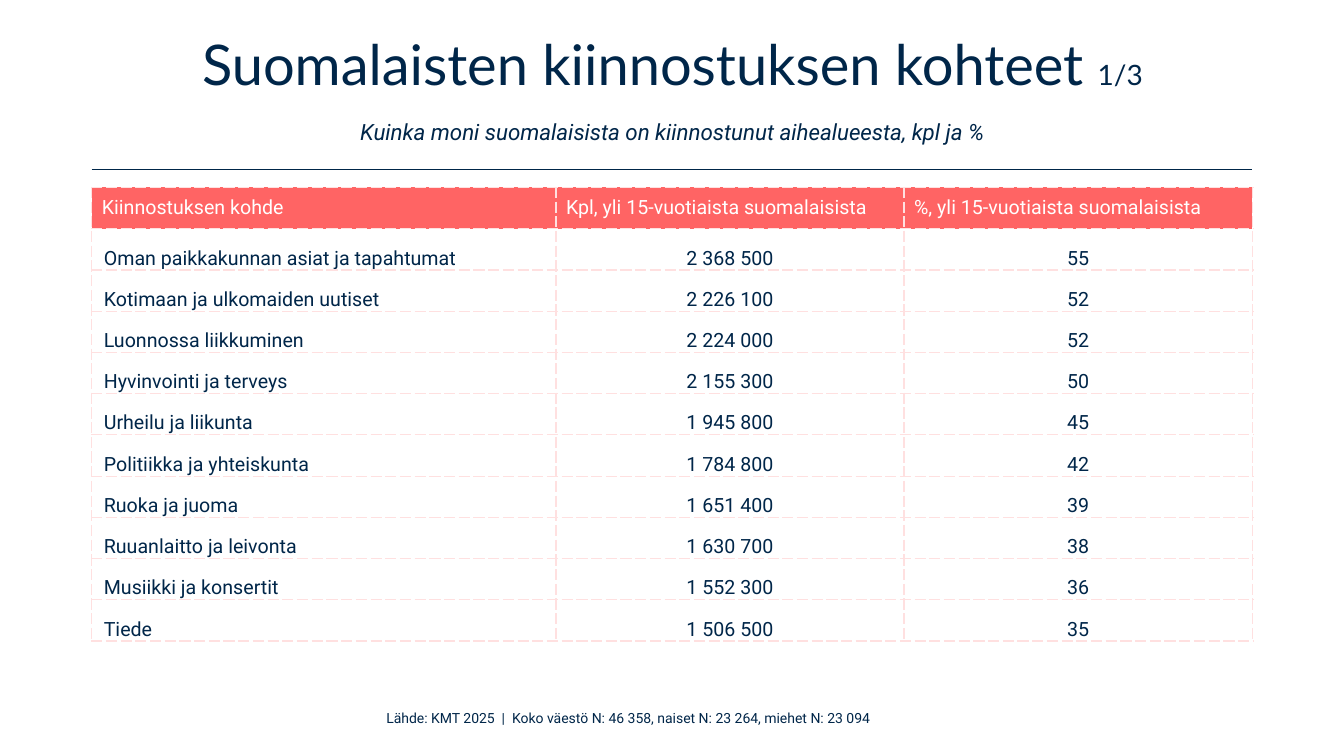
from lxml.etree import SubElement
from pptx import Presentation
from pptx.dml.color import RGBColor
from pptx.enum.shapes import MSO_CONNECTOR
from pptx.enum.text import MSO_ANCHOR as Anchor, PP_ALIGN as Align
from pptx.oxml.ns import qn
from pptx.util import Inches, Pt

NAVY, CORAL, BLUSH, WHITE = "002649", "FF6464", "FFE0E0", "FFFFFF"
HEADING_FONT, BODY_FONT = "Lato", "Roboto"
HEADERS = ("Kiinnostuksen kohde", "Kpl, yli 15-vuotiaista suomalaisista",
           "%, yli 15-vuotiaista suomalaisista")
INTERESTS = [
    ("Oman paikkakunnan asiat ja tapahtumat", "2 368 500", "55"),
    ("Kotimaan ja ulkomaiden uutiset", "2 226 100", "52"),
    ("Luonnossa liikkuminen", "2 224 000", "52"),
    ("Hyvinvointi ja terveys", "2 155 300", "50"),
    ("Urheilu ja liikunta", "1 945 800", "45"),
    ("Politiikka ja yhteiskunta", "1 784 800", "42"),
    ("Ruoka ja juoma", "1 651 400", "39"),
    ("Ruuanlaitto ja leivonta", "1 630 700", "38"),
    ("Musiikki ja konsertit", "1 552 300", "36"),
    ("Tiede", "1 506 500", "35"),
]


def rgb(color):
    return RGBColor.from_string(color)


def add_run(paragraph, text, size, font=BODY_FONT, color=NAVY, italic=False):
    run = paragraph.add_run()
    run.text = text
    run.font.size = Pt(size)
    run.font.name = font
    run.font.italic = italic
    run.font.color.rgb = rgb(color)


def add_centred_paragraph(slide, left, top, width, height):
    """Add a wrapping text box and return its centred first paragraph."""
    frame = slide.shapes.add_textbox(
        Inches(left), Inches(top), Inches(width), Inches(height)).text_frame
    frame.word_wrap = True
    frame.vertical_anchor = Anchor.MIDDLE
    paragraph = frame.paragraphs[0]
    paragraph.alignment = Align.CENTER
    return paragraph


def add_heading(slide, left, top, width, height):
    heading = add_centred_paragraph(slide, left, top, width, height)
    heading.line_spacing = Pt(35)
    heading.space_after = Pt(18)
    add_run(heading, "Suomalaisten kiinnostuksen kohteet ", 40, HEADING_FONT)
    add_run(heading, "1/3", 20, HEADING_FONT)
    heading.add_line_break()
    add_run(heading, "Kuinka moni suomalaisista on kiinnostunut aihealueesta, kpl ja %",
            16, italic=True)


def add_rule(slide, left, top, width):
    rule = slide.shapes.add_connector(
        MSO_CONNECTOR.STRAIGHT, Inches(left), Inches(top), Inches(left + width), Inches(top))
    rule.line.color.rgb = rgb(NAVY)
    rule.line.width = Pt(1)
    SubElement(rule._element.spPr, qn("a:effectLst"))


def add_dashed_borders(cell):
    properties = cell._tc.get_or_add_tcPr()
    for side in ("a:lnL", "a:lnR", "a:lnT", "a:lnB"):
        border = SubElement(properties, qn(side), w=str(Pt(1)))
        SubElement(SubElement(border, qn("a:solidFill")), qn("a:srgbClr"), val=BLUSH)
        SubElement(border, qn("a:prstDash"), val="sysDash")


def fill_header_cell(cell, text):
    cell.vertical_anchor = Anchor.MIDDLE
    cell.fill.solid()
    cell.fill.fore_color.rgb = rgb(CORAL)
    add_run(cell.text_frame.paragraphs[0], text, 14, color=WHITE)


def fill_body_cell(cell, text, is_label):
    cell.vertical_anchor = Anchor.BOTTOM
    cell.margin_left = Inches(0.12 if is_label else 0.01)
    cell.margin_right = cell.margin_top = Inches(0.01)
    cell.margin_bottom = 0
    cell.fill.background()
    paragraph = cell.text_frame.paragraphs[0]
    paragraph.alignment = Align.LEFT if is_label else Align.CENTER
    add_run(paragraph, text, 14)


def add_interest_table(slide, left, top, width, height):
    rows = [HEADERS, *INTERESTS]
    table = slide.shapes.add_table(
        len(rows), len(HEADERS), Inches(left), Inches(top), Inches(width), Inches(height)).table
    table.first_row = table.horz_banding = False
    for column, share in zip(table.columns, (0.4, 0.3, 0.3)):
        column.width = Inches(width * share)
    for row in table.rows:
        row.height = Inches(height / len(rows))
    for r, values in enumerate(rows):
        for c, text in enumerate(values):
            cell = table.cell(r, c)
            add_dashed_borders(cell)
            if r == 0:
                fill_header_cell(cell, text)
            else:
                fill_body_cell(cell, text, is_label=c == 0)


def add_source_line(slide, left, top, width, height):
    source = add_centred_paragraph(slide, left, top, width, height)
    add_run(source, "Lähde: KMT 2025  |  Koko väestö N: 46 358, naiset N: 23 264, miehet N: 23 094",
            10)


def main():
    deck = Presentation()
    deck.slide_width, deck.slide_height = Inches(13.33), Inches(7.5)
    slide = deck.slides.add_slide(deck.slide_layouts[6])
    add_source_line(slide, 3, 6.99, 6.46, 0.27)
    add_heading(slide, 0.92, 0.42, 11.5, 1.07)
    add_rule(slide, 0.91, 1.68, 11.51)
    add_interest_table(slide, 0.91, 1.86, 11.51, 4.5)
    deck.save("out.pptx")


if __name__ == "__main__":
    main()
